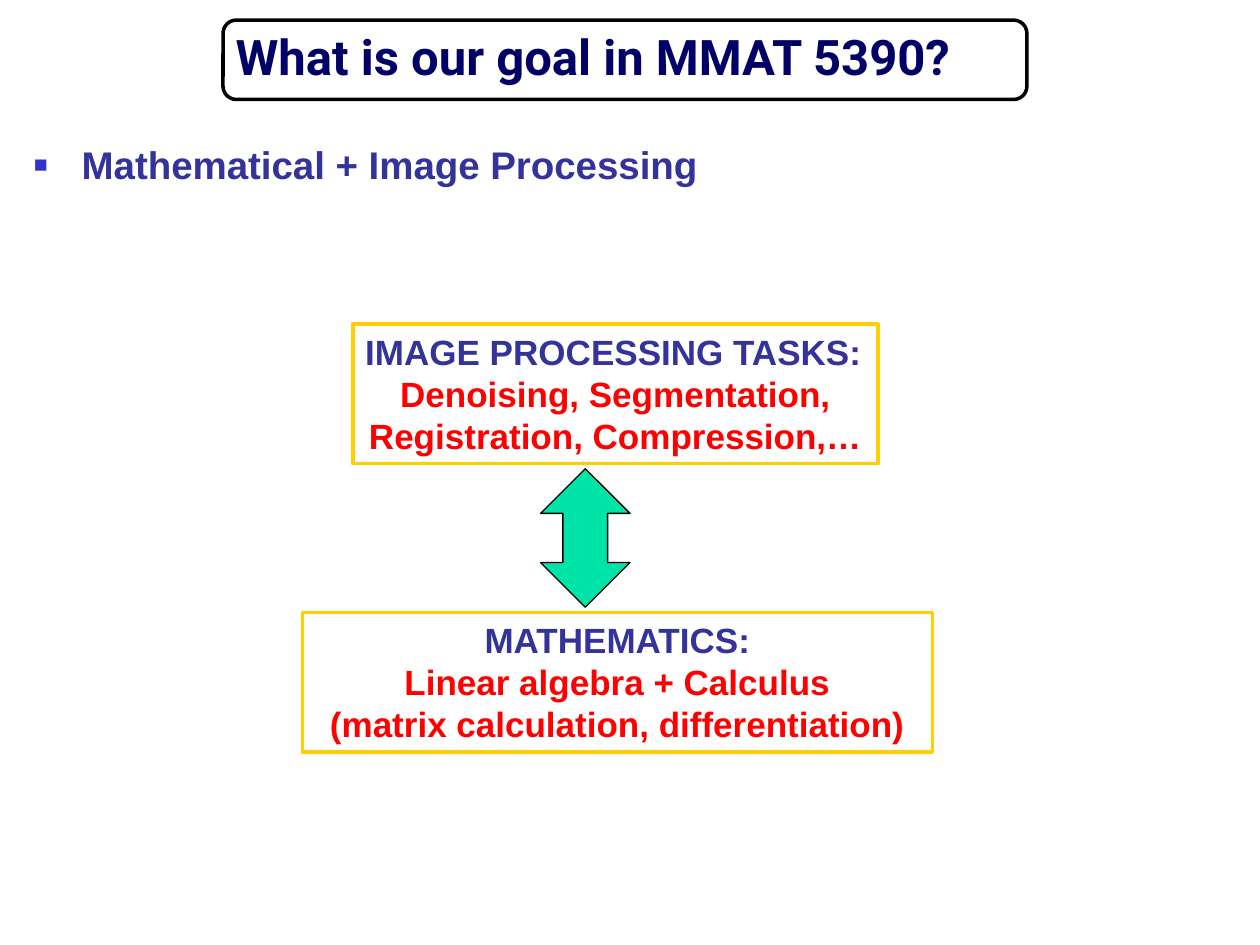
from pptx import Presentation
from pptx.dml.color import RGBColor
from pptx.enum.shapes import MSO_SHAPE
from pptx.enum.text import MSO_ANCHOR, MSO_AUTO_SIZE, PP_ALIGN
from pptx.oxml import parse_xml
from pptx.oxml.ns import nsdecls
from pptx.util import Inches, Pt

ROUND, RECT = MSO_SHAPE.ROUNDED_RECTANGLE, MSO_SHAPE.RECTANGLE
ARROW = MSO_SHAPE.UP_DOWN_ARROW
LEFT, MID = PP_ALIGN.LEFT, PP_ALIGN.CENTER
NAVY, BLUE, RED = "000066", "333399", "FF0000"
WHITE, BLACK, GOLD, GREEN = "FFFFFF", "000000", "FFCF01", "00E4A8"

prs = Presentation()
prs.slide_width, prs.slide_height = Inches(10), Inches(7.5)
slide = prs.slides.add_slide(prs.slide_layouts[5])


def style(par, text, size, tint, align=LEFT, face="Arial"):
    par.text, par.alignment = text, align
    font = par.font
    font.name, font.size, font.bold = face, Pt(size), True
    font.color.rgb = RGBColor.from_string(tint)


def draw(kind, box, fill, line, width):
    shape = slide.shapes.add_shape(kind, *map(Inches, box))
    shape.shadow.inherit = False
    if fill:
        shape.fill.solid()
        shape.fill.fore_color.rgb = RGBColor.from_string(fill)
    else:
        shape.fill.background()
    shape.line.color.rgb = RGBColor.from_string(line)
    shape.line.width = Pt(width)
    return shape


# Title in its rounded frame
title = slide.shapes.title
title.left, title.top, title.width, title.height = map(Inches, (1.77, 0.2, 8.23, 1.19))
frame = title.text_frame
frame.auto_size = MSO_AUTO_SIZE.NONE
frame.vertical_anchor = MSO_ANCHOR.TOP
style(frame.paragraphs[0], "What is our goal in MMAT 5390?", 28, NAVY, face="Roboto")
frame.paragraphs[0].line_spacing = 0.93
draw(ROUND, (1.77, 0.16, 6.38, 0.63), None, BLACK, 2)

# Bulleted topic
topic = slide.shapes.add_textbox(*map(Inches, (0.17, 1.07, 9.41, 0.5)))
topic.text_frame.word_wrap = True
par = topic.text_frame.paragraphs[0]
style(par, "Mathematical + Image Processing", 22, BLUE)
props = par._p.get_or_add_pPr()
props.set("marL", str(Inches(0.38)))
props.set("indent", str(-Inches(0.38)))
for tag in ('<a:buClr {}><a:srgbClr val="3333CC"/></a:buClr>',
            '<a:buSzPct {} val="60000"/>',
            '<a:buFont {} typeface="Arial"/>',
            '<a:buChar {} char="■"/>'):
    props.insert_element_before(parse_xml(tag.format(nsdecls("a"))), "a:tabLst", "a:defRPr")

# Tasks above, mathematics below
cards = [
    (2.8, 2.57, 4.17, LEFT, ["IMAGE PROCESSING TASKS:",
                             "Denoising, Segmentation, Registration, Compression,…"]),
    (2.4, 4.86, 5, MID, ["MATHEMATICS:", "Linear algebra + Calculus",
                         "(matrix calculation, differentiation)"]),
]
for x, y, wide, align, lines in cards:
    frame = draw(RECT, (x, y, wide, 1.11), WHITE, GOLD, 2).text_frame
    frame.word_wrap = True
    frame.vertical_anchor = MSO_ANCHOR.TOP
    for i, text in enumerate(lines):
        par = frame.add_paragraph() if i else frame.paragraphs[0]
        style(par, text, 20, RED if i else BLUE, MID if i else align)

# Two-way arrow between them
draw(ARROW, (4.29, 3.72, 0.71, 1.1), GREEN, BLACK, 0.75)

prs.save("out.pptx")
